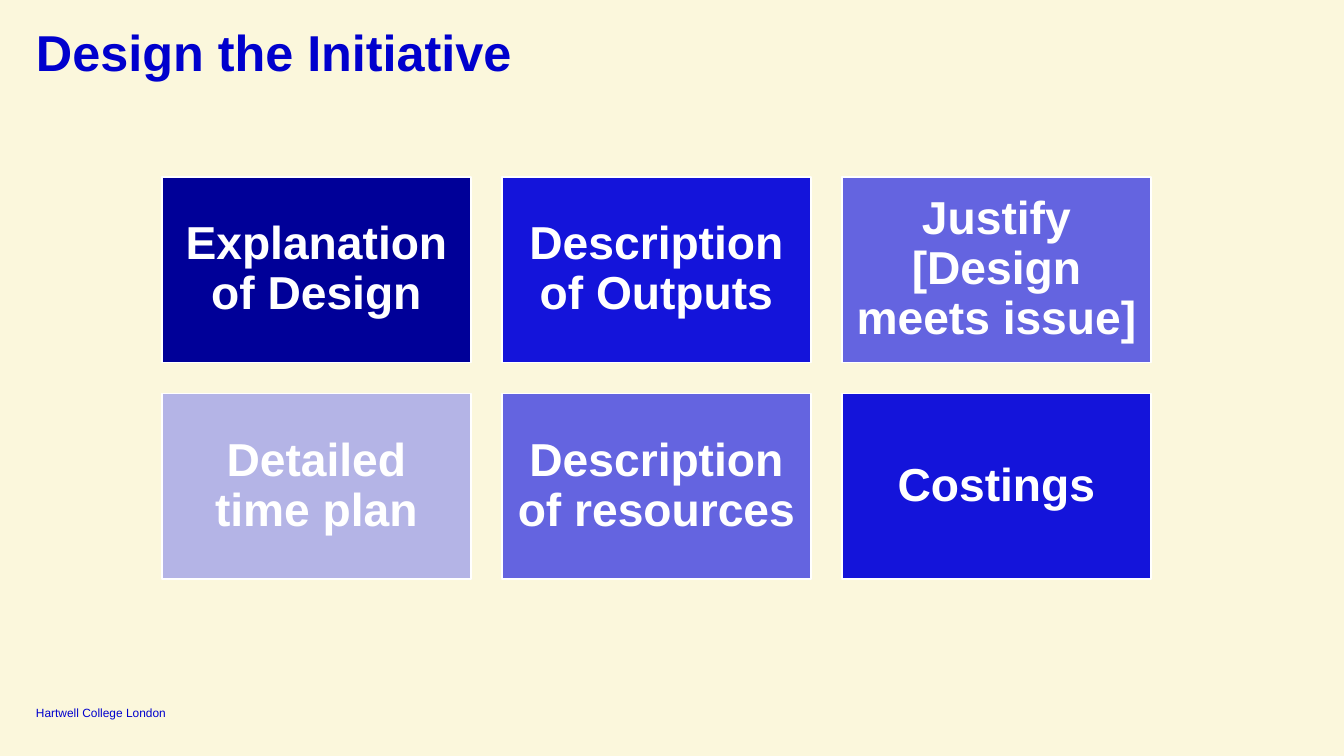
from pptx import Presentation
from pptx import util as u
from pptx.dml.color import RGBColor
from pptx.enum import shapes, text

EMU_PER_PX = 914400 / 100.8
FONT = "Arial"
COLORS = {
    "background": "FBF7DC",
    "heading": "0000CD",
    "white": "FFFFFF",
    "navy": "000098",
    "blue": "1414DA",
    "violet": "6464E0",
    "lavender": "B4B4E6",
}
TILES = [
    ("Explanation of Design", "navy"),
    ("Description of Outputs", "blue"),
    ("Justify [Design meets issue]", "violet"),
    ("Detailed time plan", "lavender"),
    ("Description of resources", "violet"),
    ("Costings", "blue"),
]


def px(length):
    return u.Emu(round(length * EMU_PER_PX))


def color(name):
    return RGBColor.from_string(COLORS[name])


def write(shape, content, size, color_name, bold=False, inset=0,
          anchor=text.MSO_ANCHOR.TOP, align=text.PP_ALIGN.LEFT, spacing=1.0):
    frame = shape.text_frame
    frame.word_wrap = True
    frame.vertical_anchor = anchor
    frame.margin_left = frame.margin_right = px(inset)
    frame.margin_top = frame.margin_bottom = px(inset)
    paragraph = frame.paragraphs[0]
    paragraph.text = content
    paragraph.alignment = align
    paragraph.line_spacing = spacing
    paragraph.font.name = FONT
    paragraph.font.size = u.Pt(size)
    paragraph.font.bold = bold
    paragraph.font.color.rgb = color(color_name)


def add_title(slide, left, top, width, height):
    title = slide.shapes.add_textbox(px(left), px(top), px(width), px(height))
    write(title, "Design the Initiative", 36, "heading", bold=True, spacing=0.9)


def add_footer(slide, left, top, width, height):
    footer = slide.shapes.add_textbox(px(left), px(top), px(width), px(height))
    write(footer, "Hartwell College London", 8.5, "heading",
          anchor=text.MSO_ANCHOR.BOTTOM)


def add_tile(slide, left, top, width, height, label, fill):
    tile = slide.shapes.add_shape(shapes.MSO_SHAPE.RECTANGLE,
                                  px(left), px(top), px(width), px(height))
    tile.shadow.inherit = False
    tile.fill.solid()
    tile.fill.fore_color.rgb = color(fill)
    tile.line.color.rgb = color("white")
    tile.line.width = u.Pt(1)
    write(tile, label, 33, "white", bold=True, inset=14,
          anchor=text.MSO_ANCHOR.MIDDLE, align=text.PP_ALIGN.CENTER, spacing=0.9)


def add_tile_grid(slide, left, top, width, height, columns=3, gap=31):
    """Fill the box row by row with equal tiles."""
    rows = len(TILES) // columns
    tile_width = (width - gap * (columns - 1)) / columns
    tile_height = (height - gap * (rows - 1)) / rows
    for index, (label, fill) in enumerate(TILES):
        row, column = divmod(index, columns)
        add_tile(slide, left + column * (tile_width + gap),
                 top + row * (tile_height + gap),
                 tile_width, tile_height, label, fill)


def main():
    presentation = Presentation()
    presentation.slide_width = px(1344)
    presentation.slide_height = px(756)
    slide = presentation.slides.add_slide(presentation.slide_layouts[6])
    slide.background.fill.solid()
    slide.background.fill.fore_color.rgb = color("background")
    add_footer(slide, 36, 705, 156, 15)
    add_title(slide, 36, 28, 1272, 41)
    add_tile_grid(slide, 162, 177, 989, 402)
    presentation.save("out.pptx")


if __name__ == "__main__":
    main()
